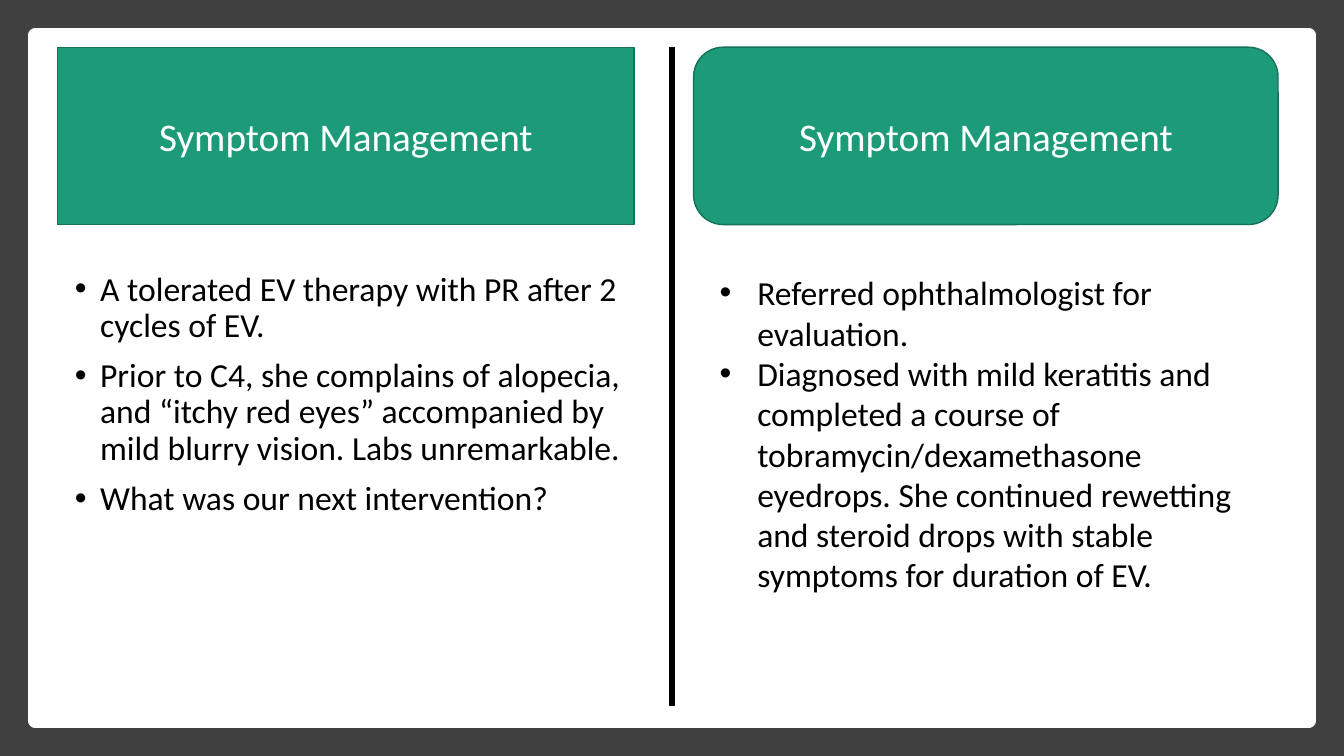
from dataclasses import dataclass

from lxml import etree
from pptx import Presentation
from pptx.dml.color import RGBColor
from pptx.enum.shapes import MSO_CONNECTOR, MSO_SHAPE
from pptx.enum.text import MSO_ANCHOR, MSO_AUTO_SIZE, PP_ALIGN
from pptx.oxml.ns import qn
from pptx.util import Cm, Pt

RECT = MSO_SHAPE.RECTANGLE
LINE = MSO_CONNECTOR.STRAIGHT
TOP, MIDDLE = MSO_ANCHOR.TOP, MSO_ANCHOR.MIDDLE
LEFT, CENTER = PP_ALIGN.LEFT, PP_ALIGN.CENTER
FIXED = MSO_AUTO_SIZE.NONE

COLUMNS = [
    {
        "head": "Symptom Management",
        "head_slot": 0,
        "head_x": 1.45,
        "head_wide": 14.53,
        "list": [
            "A tolerated EV therapy with PR after 2 cycles of EV.",
            "Prior to C4, she complains of alopecia, and “itchy red eyes” "
            "accompanied by mild blurry vision. Labs unremarkable.",
            "What was our next intervention?",
        ],
        "list_slot": 2,
        "list_box": (1.63, 6.73, 14.35, 10.39),
        "indent": 0.64,
        "spacing": 0.9,
        "gap": 10,
    },
    {
        "head": "Symptom Management",
        "head_slot": 3,
        "head_x": 17.48,
        "head_wide": 14.73,
        "list": [
            "Referred ophthalmologist for evaluation.",
            "Diagnosed with mild keratitis and completed a course of "
            "tobramycin/dexamethasone eyedrops. She continued rewetting and "
            "steroid drops with stable symptoms for duration of EV.",
        ],
        "list_slot": 4,
        "list_box": (17.88, 6.73, 14.15, 8.46),
        "indent": 0.95,
        "spacing": 1.0,
        "gap": 0,
    },
]
WIDE, HIGH, EDGE = 33.87, 19.05, 0.89
HEAD_TOP, HEAD_HIGH, RULE_END = 1.19, 4.47, 17.78


@dataclass(frozen=True)
class Theme:
    """Colours, font and type sizes of the slide."""

    dark: RGBColor = RGBColor(0x40, 0x40, 0x40)
    white: RGBColor = RGBColor(0xFF, 0xFF, 0xFF)
    black: RGBColor = RGBColor(0x00, 0x00, 0x00)
    green: RGBColor = RGBColor(0x1D, 0x9A, 0x78)
    pine: RGBColor = RGBColor(0x15, 0x72, 0x59)
    font: str = "Calibri"
    head: Pt = Pt(28)
    body: Pt = Pt(24)


THEME = Theme()


def place(shape, box):
    shape.left, shape.top, shape.width, shape.height = map(Cm, box)


def paint(shape, fill, line, width):
    shape.fill.solid()
    shape.fill.fore_color.rgb = fill
    shape.line.color.rgb = line
    shape.line.width = Pt(width)


def style(para, size, color, align):
    para.alignment = align
    for run in para.runs:
        run.font.name = THEME.font
        run.font.size = size
        run.font.bold = False
        run.font.color.rgb = color


def set_frame(shape, anchor):
    frame = shape.text_frame
    frame.word_wrap = True
    frame.auto_size = FIXED
    frame.vertical_anchor = anchor
    return frame


def add_panel(slide, depth, inset, fill, width):
    box = map(Cm, (inset, inset, WIDE - 2 * inset, HIGH - 2 * inset))
    panel = slide.shapes.add_shape(RECT, *box)
    panel.shadow.inherit = False
    paint(panel, fill, fill, width)
    if not width:
        panel.line.fill.background()
    slide.shapes.element.insert(depth, panel.element)


def fill_head(shape, column):
    place(shape, (column["head_x"], HEAD_TOP, column["head_wide"], HEAD_HIGH))
    form = etree.SubElement(shape.element.spPr, qn("a:prstGeom"), prst="roundRect")
    etree.SubElement(form, qn("a:avLst"))
    paint(shape, THEME.green, THEME.pine, 1)
    frame = set_frame(shape, MIDDLE)
    frame.text = column["head"]
    para = frame.paragraphs[0]
    para.space_before = Pt(0)
    style(para, THEME.head, THEME.white, CENTER)


def fill_list(shape, column):
    place(shape, column["list_box"])
    frame = set_frame(shape, TOP)
    frame.text = "\n".join(column["list"])
    for row, para in enumerate(frame.paragraphs):
        para.line_spacing = column["spacing"]
        para.space_before = Pt(column["gap"] if row else 0)
        props = para._p.get_or_add_pPr()
        props.set("marL", str(Cm(column["indent"])))
        props.set("indent", str(-Cm(column["indent"])))
        etree.SubElement(props, qn("a:buFont"), typeface="Arial")
        etree.SubElement(props, qn("a:buChar"), char="•")
        style(para, THEME.body, THEME.black, LEFT)


def add_rule(slide):
    mid = Cm(WIDE / 2)
    rule = slide.shapes.add_connector(LINE, mid, Cm(HEAD_TOP), mid, Cm(RULE_END))
    rule.line.color.rgb = THEME.black
    rule.line.width = Pt(4.25)
    etree.SubElement(rule.element.spPr, qn("a:effectLst"))


def main():
    deck = Presentation()
    deck.slide_width, deck.slide_height = Cm(WIDE), Cm(HIGH)
    slide = deck.slides.add_slide(deck.slide_layouts.get_by_name("Comparison"))
    slots = {slot.placeholder_format.idx: slot for slot in slide.placeholders}
    add_panel(slide, 2, 0, THEME.dark, 0)
    add_panel(slide, 3, EDGE, THEME.white, 10)
    for column in COLUMNS:
        fill_head(slots.pop(column["head_slot"]), column)
        fill_list(slots.pop(column["list_slot"]), column)
    for spare in slots.values():
        slide.shapes.element.remove(spare.element)
    add_rule(slide)
    deck.save("out.pptx")


if __name__ == "__main__":
    main()
